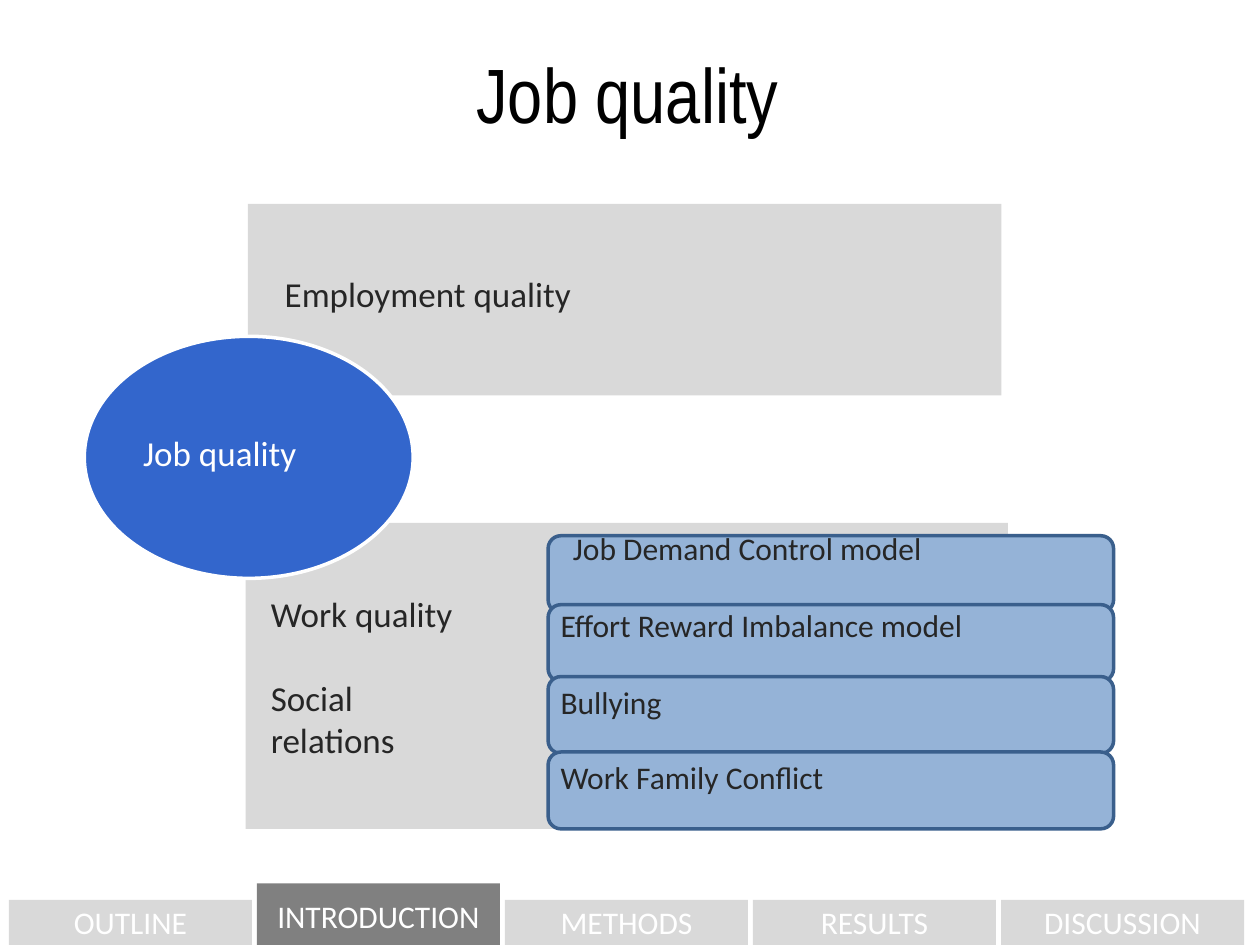
"""Build the job quality overview slide with its section navigation bar."""
from pptx import Presentation
from pptx.dml.color import RGBColor
from pptx.enum.shapes import MSO_SHAPE as Shape
from pptx.enum.text import MSO_ANCHOR as Anchor, PP_ALIGN as Align
from pptx.util import Cm, Pt

COLORS = {
    "black": "000000", "white": "FFFFFF", "ink": "262626",
    "pale": "D9D9D9", "active": "808080",
    "blue": "3366CC", "light_blue": "95B3D7", "outline": "3A5F8C",
}
TITLE = "Job quality"
SECTIONS = ["OUTLINE", "INTRODUCTION", "METHODS", "RESULTS", "DISCUSSION"]
CURRENT = "INTRODUCTION"
PANELS = [(4.95, 10.54, 15.37, 6.17), (5, 4.11, 15.19, 3.86)]
LABELS = [
    ([("Work quality", 0), ("Social", 24), ("relations", 0)], (5.21, 11.81, 9.8, 4.95)),
    ([("Employment quality", 0)], (5.49, 5.36, 11.66, 1.96)),
]
MODELS = [
    ("Job Demand Control model", 10.8, (11.3, 10.54)),
    ("Effort Reward Imbalance model", 12.19, (11.05, 12.09)),
    ("Bullying", 13.64, (11.05, 13.64)),
    ("Work Family Conflict", 15.16, (11.05, 15.16)),
]
MODEL_LEFT, MODEL_WIDTH, MODEL_HEIGHT = 11.05, 11.4, 1.55
TAB_LEFT, TAB_PITCH, TAB_WIDTH = 0.18, 5, 4.9


def color(name):
    return RGBColor.from_string(COLORS[name])


def write(box, lines, size, ink="ink", align=Align.LEFT, anchor=Anchor.TOP, font="Calibri"):
    frame = box.text_frame
    frame.word_wrap = True
    frame.vertical_anchor = anchor
    for index, (text, gap) in enumerate(lines):
        para = frame.add_paragraph() if index else frame.paragraphs[0]
        para.text = text
        para.alignment = align
        para.space_before = Pt(gap)
        para.font.name = font
        para.font.size = Pt(size)
        para.font.color.rgb = color(ink)


def add_label(shapes, place, lines, size, **style):
    write(shapes.add_textbox(*map(Cm, place)), lines, size, **style)


def add_block(shapes, kind, place, fill, line=None):
    block = shapes.add_shape(kind, *map(Cm, place))
    block.shadow.inherit = False
    block.fill.solid()
    block.fill.fore_color.rgb = color(fill)
    if line:
        block.line.color.rgb = color(line)
        block.line.width = Pt(2)
    else:
        block.line.fill.background()
    return block


def main():
    deck = Presentation()
    deck.slide_width, deck.slide_height = Cm(25.4), Cm(19.05)
    shapes = deck.slides.add_slide(deck.slide_layouts[6]).shapes

    add_label(shapes, (1.22, 0.79, 22.86, 2.16), [(TITLE, 0)], 44, ink="black",
              align=Align.CENTER, anchor=Anchor.MIDDLE, font="Arial Narrow")

    for index, section in enumerate(SECTIONS):
        current = section == CURRENT
        top, height = (17.81, 1.3) if current else (18.14, 0.91)
        place = (TAB_LEFT + index * TAB_PITCH, top, TAB_WIDTH, height)
        tab = add_block(shapes, Shape.RECTANGLE, place, "active" if current else "pale")
        write(tab, [(section, 0)], 18, "white", Align.CENTER, Anchor.MIDDLE)

    for place in PANELS:
        add_block(shapes, Shape.RECTANGLE, place, "pale")
    for lines, place in LABELS:
        add_label(shapes, place, lines, 20)

    for name, top, (text_left, text_top) in MODELS:
        group = shapes.add_group_shape().shapes
        place = (MODEL_LEFT, top, MODEL_WIDTH, MODEL_HEIGHT)
        add_block(group, Shape.ROUNDED_RECTANGLE, place, "light_blue", "outline")
        add_label(group, (text_left, text_top, MODEL_WIDTH, 1.32), [(name, 0)], 18)

    add_block(shapes, Shape.OVAL, (1.7, 6.78, 6.63, 4.88), "blue", "white")
    add_label(shapes, (2.31, 8.58, 4.24, 1.1), [(TITLE, 0)], 20, ink="white", align=Align.CENTER)

    deck.save("out.pptx")


if __name__ == "__main__":
    main()
